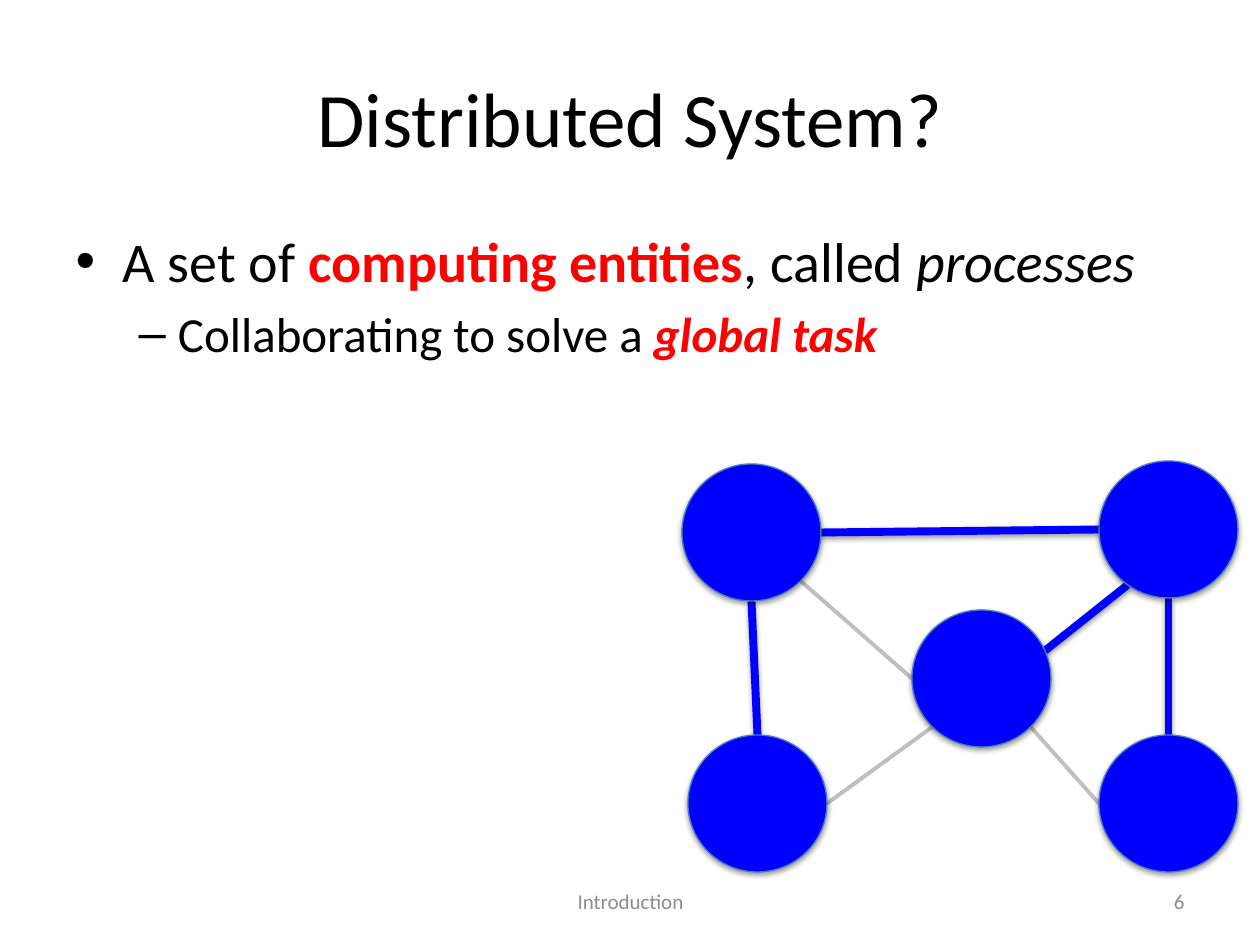
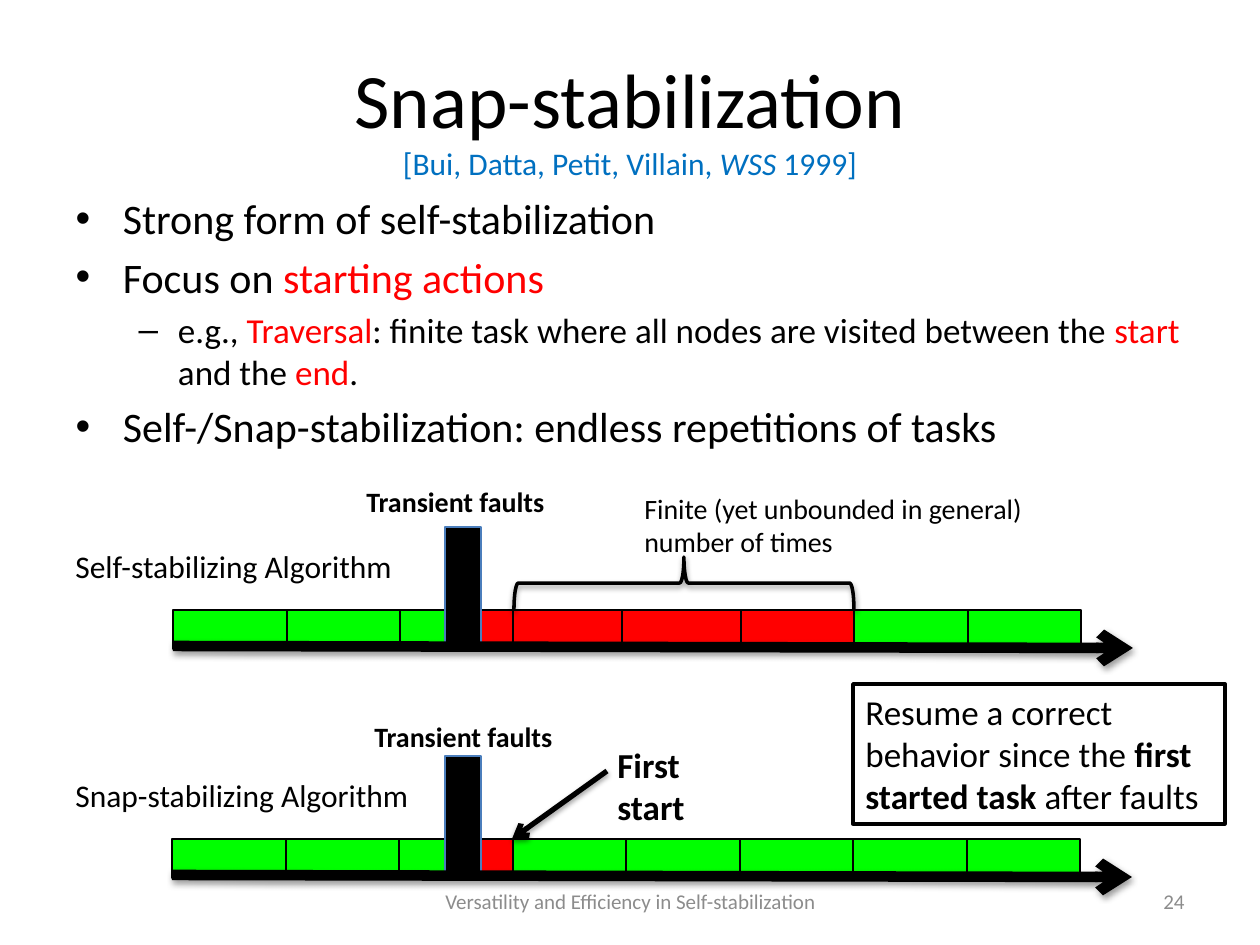
from dataclasses import dataclass
from itertools import pairwise
from math import cos, radians, sin

from lxml import etree
from pptx import Presentation
from pptx.dml.color import RGBColor
from pptx.enum.shapes import MSO_CONNECTOR, MSO_SHAPE
from pptx.enum.text import MSO_ANCHOR, PP_ALIGN
from pptx.oxml.ns import qn
from pptx.util import Emu, Pt

STRAIGHT = MSO_CONNECTOR.STRAIGHT
RECT, OVAL, BRACE = MSO_SHAPE.RECTANGLE, MSO_SHAPE.OVAL, MSO_SHAPE.RIGHT_BRACE
TOP, MIDDLE = MSO_ANCHOR.TOP, MSO_ANCHOR.MIDDLE
LEFT, CENTER, RIGHT = PP_ALIGN.LEFT, PP_ALIGN.CENTER, PP_ALIGN.RIGHT


@dataclass(frozen=True)
class Theme:
    font: str = "Calibri"
    black: str = "000000"
    red: str = "FF0000"
    green: str = "00FF00"
    blue: str = "0000FF"
    rim: str = "4B7EBC"
    light_link: str = "BFBFBF"
    citation: str = "0070C0"
    footer: str = "8C8C8C"
    title_size: int = 44
    citation_size: int = 18
    name_size: int = 18
    label_size: int = 16
    note_size: int = 20
    footer_size: int = 12


THEME = Theme()
EMU_PER_PX = 914400 / 126
WIDTH, HEIGHT = 1260, 945
TITLE_BOX = (63, 38, 1134, 157)
FOOTER_BOX = (431, 876, 399, 50)
NUMBER_BOX = (903, 876, 294, 50)

RUN_STYLES = {
    "red": {"color": THEME.red},
    "red bold": {"color": THEME.red, "bold": True},
    "red bold italic": {"color": THEME.red, "bold": True, "italic": True},
    "bold": {"bold": True},
    "italic": {"italic": True},
    "cite": {"color": THEME.citation, "size": THEME.citation_size},
    "cite italic": {"color": THEME.citation, "size": THEME.citation_size,
                    "italic": True},
}

# A run is plain text, a (text, style) pair, or "\n" for a line break.
# A bullet is (level, size, runs).
SYSTEM = {
    "title": ["Distributed System?"],
    "body_box": (63, 220, 1134, 624),
    "bullets": [
        (0, 32, ["A set of ", ("computing entities", "red bold"), ", called ",
                 ("processes", "italic")]),
        (1, 28, ["Collaborating to solve a ",
                 ("global task", "red bold italic")]),
    ],
    "footer": "Introduction",
    "number": "6",
}
SNAP = {
    "title": ["Snap-stabilization", "\n",
              ("[Bui, Datta, Petit, Villain, ", "cite"),
              ("WSS", "cite italic"), (" 1999]", "cite")],
    "body_box": (63, 186, 1134, 740),
    "bullets": [
        (0, 24, ["Strong form of self-stabilization"]),
        (0, 24, ["Focus on ", ("starting actions", "red")]),
        (1, 20, ["e.g., ", ("Traversal", "red"),
                 ": finite task where all nodes are visited between the ",
                 ("start", "red"), " and the ", ("end", "red"), "."]),
        (0, 24, ["Self-/Snap-stabilization: endless repetitions of tasks"]),
    ],
    "footer": "Versatility and Efficiency in Self-stabilization",
    "number": "24",
}

PROCESS_SIZE = (139, 137)
PROCESSES = {
    "top left": (682, 464),
    "bottom left": (688, 735),
    "centre": (912, 610),
    "top right": (1099, 461),
    "bottom right": (1099, 735),
}
# Each end is a process and the clockwise angle on its rim, from the right.
TREE_LINKS = [
    (("top right", 180), ("top left", 0)),
    (("top left", 90), ("bottom left", 270)),
    (("top right", 126), ("centre", 336)),
    (("top right", 90), ("bottom right", 270)),
]
OTHER_LINKS = [
    (("bottom right", 180), ("centre", 45)),
    (("centre", 180), ("top left", 45)),
    (("centre", 135), ("bottom left", 0)),
]

# The third task is cut by the faults, so its two parts meet under their bar.
TIMELINES = [
    {"name": "Self-stabilizing Algorithm", "top": 610, "fault_label": (354, 478),
     "bounds": [173, 287, 400, 463, 513, 622, 741, 854, 968, 1081],
     "tasks": "GGGRRRRGG"},
    {"name": "Snap-stabilizing Algorithm", "top": 839, "fault_label": (362, 713),
     "bounds": [172, 286, 399, 463, 513, 626, 740, 853, 967, 1080],
     "tasks": "GGGRGGGGG"},
]
TASK_COLORS = {"G": THEME.green, "R": THEME.red}


def px(*lengths):
    return [Emu(round(length * EMU_PER_PX)) for length in lengths]


def rgb(color):
    return RGBColor.from_string(color)


def set_font(font, size=None, color=None, bold=None, italic=None):
    font.name = THEME.font
    if size:
        font.size = Pt(size)
    if color:
        font.color.rgb = rgb(color)
    if bold is not None:
        font.bold = bold
    if italic is not None:
        font.italic = italic


def write(paragraph, runs, size, color=THEME.black, bold=None, align=None):
    set_font(paragraph.font, size, color, bold)
    paragraph.alignment = align
    for part in runs:
        if part == "\n":
            paragraph.add_line_break()
            continue
        text, style = (part, None) if isinstance(part, str) else part
        run = paragraph.add_run()
        run.text = text
        if style:
            set_font(run.font, **RUN_STYLES[style])


def add_text(slide, box, lines, size, anchor=TOP, **look):
    label = slide.shapes.add_textbox(*px(*box))
    frame = label.text_frame
    frame.word_wrap = True
    frame.vertical_anchor = anchor
    for index, runs in enumerate(lines):
        paragraph = frame.add_paragraph() if index else frame.paragraphs[0]
        write(paragraph, runs, size, **look)
    return label


def set_effect(shape, shadow):
    """Leave the shape flat, or give it a soft shadow straight below."""
    properties = shape._element.spPr
    effects = etree.SubElement(properties, qn("a:effectLst"))
    if shadow:
        outer = etree.SubElement(effects, qn("a:outerShdw"), blurRad="40000",
                                 dist="20000", dir="5400000", rotWithShape="0")
        color = etree.SubElement(outer, qn("a:srgbClr"), val=THEME.black)
        etree.SubElement(color, qn("a:alpha"), val="38000")


def set_line(shape, color, width):
    shape.line.color.rgb = rgb(color)
    shape.line.width = Pt(width)


def add_figure(slide, kind, box, fill, line, width, shadow=False):
    figure = slide.shapes.add_shape(kind, *px(*box))
    if fill:
        figure.fill.solid()
        figure.fill.fore_color.rgb = rgb(fill)
    else:
        figure.fill.background()
    set_line(figure, line, width)
    set_effect(figure, shadow)
    return figure


def add_link(slide, start, end, color, width, shadow=True, arrow=False):
    link = slide.shapes.add_connector(STRAIGHT, *px(*start, *end))
    set_line(link, color, width)
    if arrow:
        etree.SubElement(link.line._get_or_add_ln(), qn("a:tailEnd"), type="arrow")
    set_effect(link, shadow)


def add_slide(deck, content):
    slide = deck.slides.add_slide(deck.slide_layouts[1])
    title, body = slide.placeholders
    for placeholder, box in ((title, TITLE_BOX), (body, content["body_box"])):
        (placeholder.left, placeholder.top,
         placeholder.width, placeholder.height) = px(*box)
    write(title.text_frame.paragraphs[0], content["title"], THEME.title_size,
          align=CENTER)
    frame = body.text_frame
    for index, (level, size, runs) in enumerate(content["bullets"]):
        paragraph = frame.add_paragraph() if index else frame.paragraphs[0]
        paragraph.level = level
        write(paragraph, runs, size)
    for box, text, align in ((FOOTER_BOX, content["footer"], CENTER),
                             (NUMBER_BOX, content["number"], RIGHT)):
        add_text(slide, box, [[text]], THEME.footer_size, MIDDLE,
                 color=THEME.footer, align=align)
    return slide


def rim_point(process, angle):
    (left, top), (width, height) = PROCESSES[process], PROCESS_SIZE
    turn = radians(angle)
    return (left + width / 2 * (1 + cos(turn)),
            top + height / 2 * (1 + sin(turn)))


def add_network(slide):
    for links, color, width, shadow in (
            (OTHER_LINKS, THEME.light_link, 2.25, False),
            (TREE_LINKS, THEME.blue, 4.5, True)):
        for start, end in links:
            add_link(slide, rim_point(*start), rim_point(*end), color, width,
                     shadow)
    for corner in PROCESSES.values():
        add_figure(slide, OVAL, (*corner, *PROCESS_SIZE), THEME.blue,
                   THEME.rim, 0.75, shadow=True)


def add_timeline(slide, name, top, fault_label, bounds, tasks):
    for (left, right), task in zip(pairwise(bounds), tasks):
        add_figure(slide, RECT, (left, top, right - left, 39),
                   TASK_COLORS[task], THEME.black, 1.5)
    add_figure(slide, RECT, (445, top - 83, 36, 121), THEME.black, THEME.rim, 0.75)
    add_link(slide, (bounds[0], top + 36), (bounds[-1] + 52, top + 38),
             THEME.black, 6, arrow=True)
    add_text(slide, (63, top - 69, 381, 50), [[name]], THEME.name_size)
    add_text(slide, (*fault_label, 212, 47), [["Transient faults"]],
             THEME.label_size, bold=True)


def add_notes_on_timelines(slide):
    add_text(slide, (632, 485, 413, 81),
             [["Finite (yet unbounded in general)"], ["number of times"]],
             THEME.label_size)
    brace = add_figure(slide, BRACE, (658, 413, 52, 340), None, THEME.black, 2,
                       shadow=True)
    brace.rotation = 270
    add_text(slide, (605, 737, 127, 90), [["First start"]], THEME.note_size,
             bold=True)
    add_link(slide, (607, 771), (512, 839), THEME.black, 3, arrow=True)
    resume = add_text(slide, (853, 684, 372, 140),
                      [["Resume a correct behavior since the ",
                        ("first started task ", "bold"), "after faults"]],
                      THEME.note_size, align=LEFT)
    set_line(resume, THEME.black, 2)


def main():
    deck = Presentation()
    deck.slide_width, deck.slide_height = px(WIDTH, HEIGHT)
    add_network(add_slide(deck, SYSTEM))
    snap = add_slide(deck, SNAP)
    for timeline in TIMELINES:
        add_timeline(snap, **timeline)
    add_notes_on_timelines(snap)
    deck.save("out.pptx")


if __name__ == "__main__":
    main()
